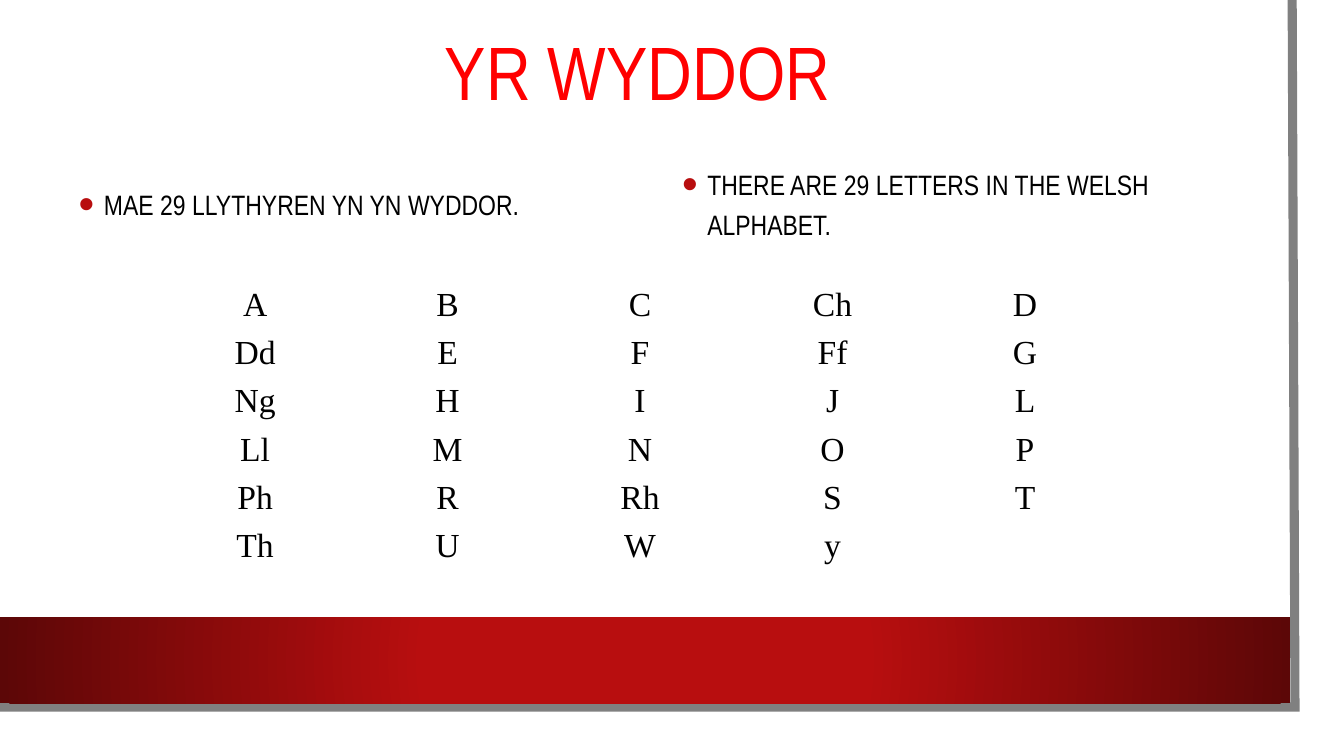
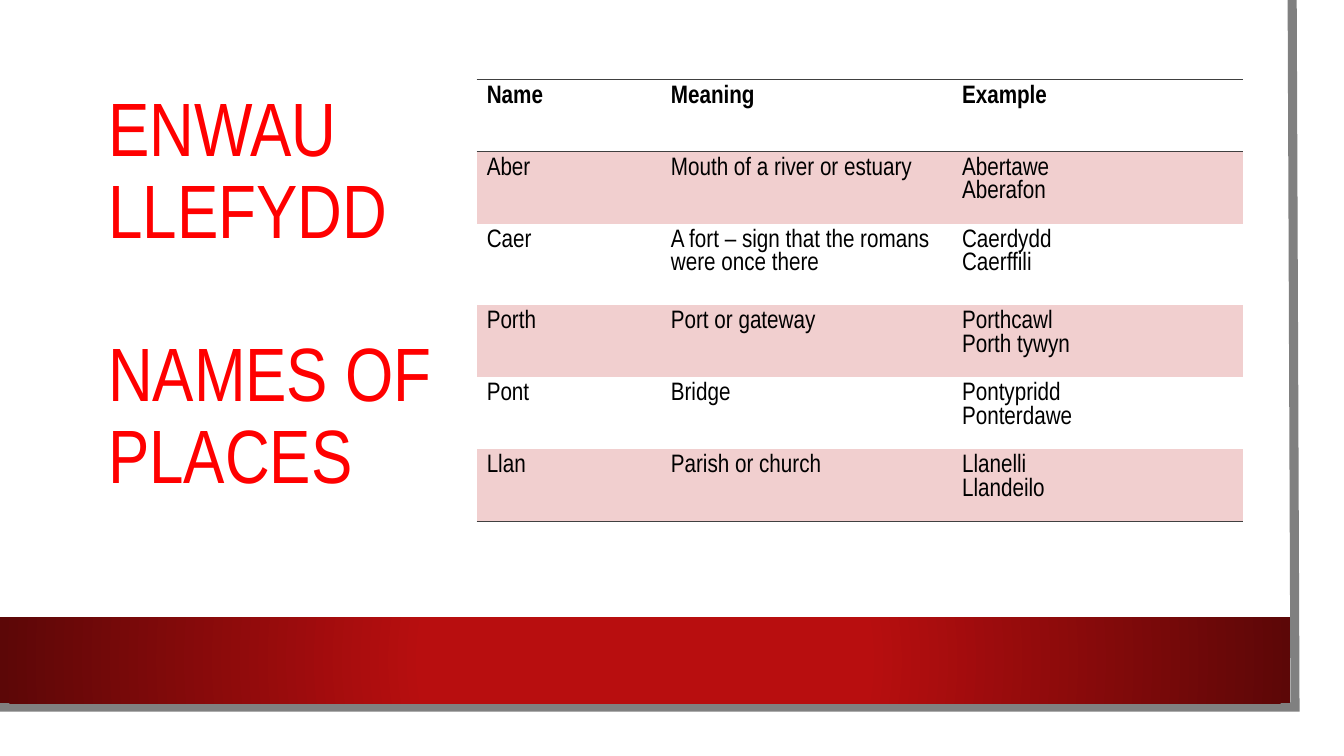
from dataclasses import dataclass

from lxml.etree import SubElement
from pptx import Presentation
from pptx.dml.color import RGBColor
from pptx.enum.shapes import MSO_SHAPE
from pptx.enum.text import MSO_ANCHOR, MSO_AUTO_SIZE, PP_ALIGN
from pptx.oxml.ns import qn
from pptx.shapes.base import BaseShape
from pptx.slide import Slide
from pptx.table import Table, _Cell
from pptx.text.text import TextFrame, _Paragraph
from pptx.util import Pt

WHITE = RGBColor(0xFF, 0xFF, 0xFF)
BLACK = RGBColor(0, 0, 0)
TITLE_RED = RGBColor(0xFF, 0, 0)
BAND_RED = RGBColor(0xB8, 0x0E, 0x0F)
BAND_DARK = RGBColor(0x5C, 0x07, 0x07)
EDGE_GRAY = RGBColor(0x80, 0x80, 0x80)
RULE_GRAY = RGBColor(0x40, 0x40, 0x40)
ROW_PINK = RGBColor(0xF1, 0xCF, 0xCF)

NARROW = "Arial Narrow"
SERIF = "Times New Roman"
PLAIN_TABLE_STYLE = "{2D5ABB26-0587-4C30-8999-92F81FD0307C}"

LETTERS = [
    ["A", "B", "C", "Ch", "D"],
    ["Dd", "E", "F", "Ff", "G"],
    ["Ng", "H", "I", "J", "L"],
    ["Ll", "M", "N", "O", "P"],
    ["Ph", "R", "Rh", "S", "T"],
    ["Th", "U", "W", "y", ""],
]
PLACE_NAMES = [
    ["Name", "Meaning", "Example"],
    ["Aber", "Mouth of a river or estuary", "Abertawe\nAberafon"],
    ["Caer", "A fort – sign that the romans were once there", "Caerdydd\nCaerffili"],
    ["Porth", "Port or gateway", "Porthcawl\nPorth tywyn"],
    ["Pont", "Bridge", "Pontypridd\nPonterdawe"],
    ["Llan", "Parish or church", "Llanelli\nLlandeilo"],
]


@dataclass(frozen=True)
class Box:
    left: float
    top: float
    width: float
    height: float


@dataclass(frozen=True)
class TextStyle:
    font: str
    size: float
    color: RGBColor
    spacing: float
    alignment: PP_ALIGN = PP_ALIGN.LEFT


@dataclass(frozen=True)
class Statement:
    placeholder: int
    text: str
    box: Box


TITLE_STYLE = TextStyle(NARROW, 54, TITLE_RED, 0.9)
STATEMENT_STYLE = TextStyle(NARROW, 20, BLACK, 1.2)
LETTER_STYLE = TextStyle(SERIF, 24, BLACK, 1.0, PP_ALIGN.CENTER)
PLACE_STYLE = TextStyle(NARROW, 18, BLACK, 1.0)

STATEMENTS = [
    Statement(1, "MAE 29 LLYTHYREN YN YN WYDDOR.", Box(49, 106, 408, 75)),
    Statement(2, "THERE ARE 29 LETTERS IN THE WELSH ALPHABET.", Box(480, 101.5, 408, 84)),
]


def place(shape: BaseShape, box: Box) -> None:
    shape.left, shape.top = Pt(box.left), Pt(box.top)
    shape.width, shape.height = Pt(box.width), Pt(box.height)


def style_text(text_frame: TextFrame, style: TextStyle) -> None:
    for paragraph in text_frame.paragraphs:
        paragraph.alignment = style.alignment
        paragraph.line_spacing = style.spacing
        paragraph.space_before = Pt(0)
        for run in paragraph.runs:
            run.font.name = style.font
            run.font.size = Pt(style.size)
            run.font.color.rgb = style.color


def fill_placeholder(shape: BaseShape, text: str, box: Box, style: TextStyle) -> TextFrame:
    place(shape, box)
    text_frame = shape.text_frame
    text_frame.text = text
    text_frame.word_wrap = True
    text_frame.auto_size = MSO_AUTO_SIZE.NONE
    text_frame.vertical_anchor = MSO_ANCHOR.MIDDLE
    style_text(text_frame, style)
    return text_frame


def add_title(slide: Slide, text: str, box: Box) -> TextFrame:
    text_frame = fill_placeholder(slide.shapes.title, text, box, TITLE_STYLE)
    text_frame.margin_left = text_frame.margin_right = Pt(7.2)
    text_frame.margin_top = text_frame.margin_bottom = Pt(7.2)
    return text_frame


def add_bullet(paragraph: _Paragraph) -> None:
    properties = paragraph._p.get_or_add_pPr()
    properties.set("marL", str(Pt(18)))
    properties.set("indent", str(-Pt(18)))
    color = SubElement(properties, qn("a:buClr"))
    SubElement(color, qn("a:srgbClr"), val=str(BAND_RED))
    SubElement(properties, qn("a:buSzPct"), val="160000")
    SubElement(properties, qn("a:buFont"), typeface="Arial")
    SubElement(properties, qn("a:buChar"), char="•")


def add_rectangle(slide: Slide, box: Box) -> BaseShape:
    rectangle = slide.shapes.add_shape(MSO_SHAPE.RECTANGLE, 0, 0, 0, 0)
    place(rectangle, box)
    rectangle.shadow.inherit = False
    rectangle.line.fill.background()
    return rectangle


def add_frame(slide: Slide) -> None:
    page = add_rectangle(slide, Box(0, 0, 943, 523.5))
    page.fill.solid()
    page.fill.fore_color.rgb = WHITE

    builder = slide.shapes.build_freeform(923, 0, scale=Pt(1))
    builder.add_line_segments([(925, 505.3), (-2, 504.6)], close=False)
    edge = builder.convert_to_shape()
    edge.shadow.inherit = False
    edge.fill.background()
    edge.line.color.rgb = EDGE_GRAY
    edge.line.width = Pt(6.5)
    SubElement(edge.element.find(".//" + qn("a:ln")), qn("a:miter"), lim="800000")

    band = add_rectangle(slide, Box(0, 440.8, 921.5, 61.5))
    band.fill.gradient()
    stops = [(0.34, BAND_RED), (1, BAND_DARK)]
    for stop, (position, color) in zip(band.fill.gradient_stops, stops):
        stop.position = position
        stop.color.rgb = color
    gradient = band.element.find(".//" + qn("a:gradFill"))
    gradient.remove(gradient.find(qn("a:lin")))
    circle = SubElement(gradient, qn("a:path"), path="circle")
    SubElement(circle, qn("a:fillToRect"), l="50000", t="50000", r="50000", b="50000")

    for shape in (page, edge, band):
        slide.shapes.title.element.addprevious(shape.element)


def add_plain_table(
    slide: Slide,
    left: float,
    top: float,
    widths: list[float],
    heights: list[float],
    rows: list[list[str]],
    style: TextStyle,
) -> Table:
    table = slide.shapes.add_table(
        len(rows), len(widths), Pt(left), Pt(top), Pt(sum(widths)), Pt(sum(heights))
    ).table
    table.first_row = table.horz_banding = False
    table._tbl.tblPr.find(qn("a:tableStyleId")).text = PLAIN_TABLE_STYLE
    for column, width in zip(table.columns, widths):
        column.width = Pt(width)
    for row, height, texts in zip(table.rows, heights, rows):
        row.height = Pt(height)
        for cell, text in zip(row.cells, texts):
            cell.text_frame.text = text
            cell.fill.background()
            style_text(cell.text_frame, style)
    return table


def add_rule(cell: _Cell, side: str) -> None:
    properties = cell._tc.get_or_add_tcPr()
    line = properties.makeelement(qn(side), {"w": str(Pt(1))})
    fill = SubElement(line, qn("a:solidFill"))
    SubElement(fill, qn("a:srgbClr"), val=str(RULE_GRAY))
    properties.insert(len(properties) - 1, line)


def build_alphabet(slide: Slide) -> None:
    add_frame(slide)
    add_title(slide, "YR WYDDOR", Box(310.5, 2, 518.5, 104.5))
    for statement in STATEMENTS:
        shape = slide.placeholders[statement.placeholder]
        text_frame = fill_placeholder(shape, statement.text, statement.box, STATEMENT_STYLE)
        add_bullet(text_frame.paragraphs[0])
    add_plain_table(slide, 113.5, 201, [137.5] * 5, [34.5] * 6, LETTERS, LETTER_STYLE)


def build_place_names(slide: Slide) -> None:
    add_frame(slide)
    title = add_title(slide, "ENWAU LLEFYDD\nNAMES OF PLACES", Box(70, 43.5, 276, 335))
    title.paragraphs[1].space_before = Pt(58.5)
    heights = [51.5, 51.5, 58, 51.5, 51.5, 51.5]
    table = add_plain_table(
        slide, 340.5, 57, [131.5, 208, 208], heights, PLACE_NAMES, PLACE_STYLE
    )
    last = len(PLACE_NAMES) - 1
    for index, row in enumerate(table.rows):
        for cell in row.cells:
            if index % 2:
                cell.fill.solid()
                cell.fill.fore_color.rgb = ROW_PINK
            if index == 0:
                add_rule(cell, "a:lnT")
                for run in cell.text_frame.paragraphs[0].runs:
                    run.font.bold = True
            if index in (0, last):
                add_rule(cell, "a:lnB")


def main() -> None:
    presentation = Presentation()
    presentation.slide_width, presentation.slide_height = Pt(960), Pt(540)
    layouts = presentation.slide_layouts
    build_alphabet(presentation.slides.add_slide(layouts.get_by_name("Two Content")))
    build_place_names(presentation.slides.add_slide(layouts.get_by_name("Title Only")))
    presentation.save("out.pptx")


if __name__ == "__main__":
    main()
